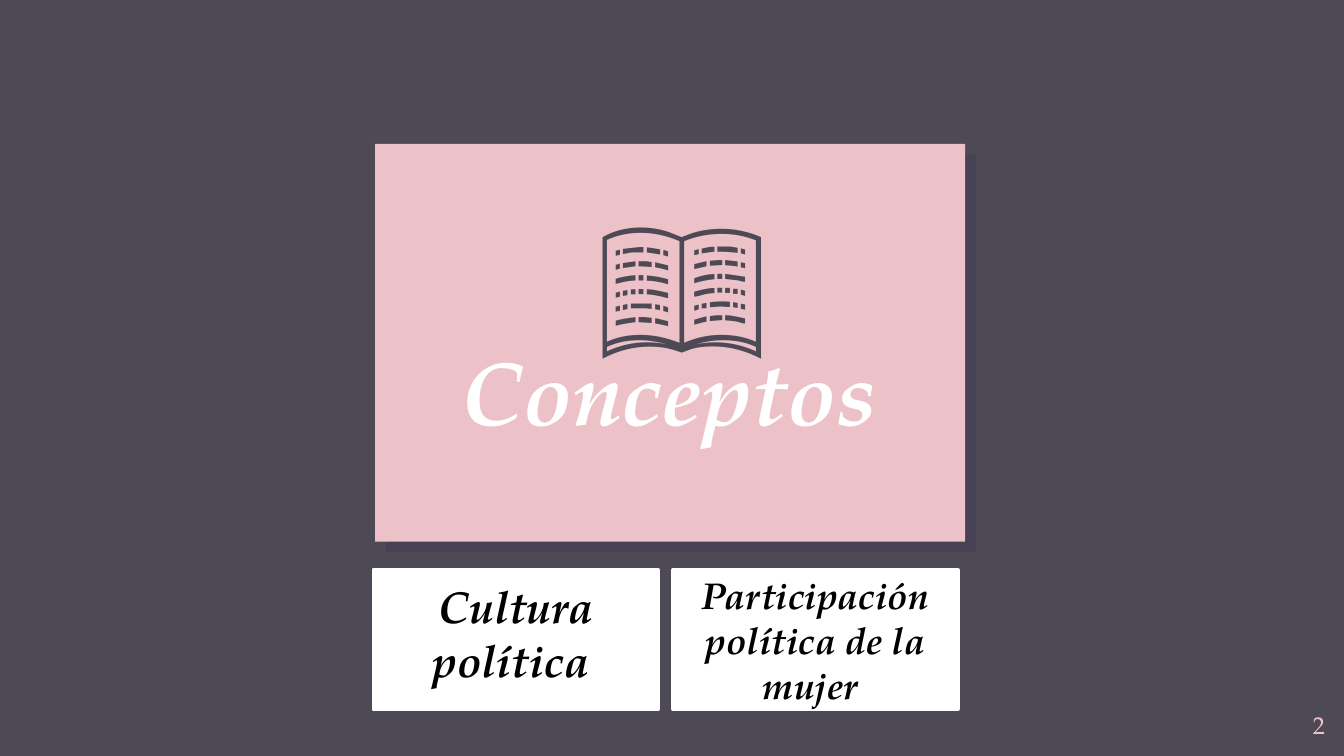
"""Build the section slide on political concepts."""
from typing import NamedTuple

from lxml import etree
from pptx import Presentation
from pptx.dml.color import RGBColor
from pptx.enum.shapes import MSO_SHAPE
from pptx.enum.text import MSO_ANCHOR, MSO_AUTO_SIZE, PP_ALIGN
from pptx.oxml.ns import qn
from pptx.util import Cm, Pt

RECT = MSO_SHAPE.RECTANGLE
TOP, MIDDLE = MSO_ANCHOR.TOP, MSO_ANCHOR.MIDDLE
LEFT, CENTER, RIGHT = PP_ALIGN.LEFT, PP_ALIGN.CENTER, PP_ALIGN.RIGHT
NO_FIT = MSO_AUTO_SIZE.NONE
SERIF, SYMBOL = "TeX Gyre Pagella", "Times New Roman"
GREY, PINK, WHITE, BLACK, NAVY = "4D4A56", "ECC1C8", "FFFFFF", "000000", "20124D"


class Box(NamedTuple):
    left: float
    top: float
    width: float
    height: float


class Style(NamedTuple):
    size: int
    color: str
    align: int = CENTER
    anchor: int = TOP
    bold: bool = True
    face: str = SERIF
    inset: float = 0.25


def paint(target, color: str) -> None:
    """Give a fill or line fill one solid colour."""
    target.solid()
    target.fore_color.rgb = RGBColor.from_string(color)


def lengths(box: Box) -> list:
    """Turn a box into slide lengths."""
    return [Cm(value) for value in box]


def write(shape, text: str, style: Style) -> None:
    """Put styled text into a shape."""
    frame = shape.text_frame
    frame.text = text
    form = {
        "word_wrap": True,
        "auto_size": NO_FIT,
        "vertical_anchor": style.anchor,
        "margin_top": Cm(style.inset),
        "margin_bottom": Cm(style.inset),
    }
    for name, value in form.items():
        setattr(frame, name, value)
    line = frame.paragraphs[0]
    line.alignment = style.align
    font = line.runs[0].font
    form = {
        "name": style.face,
        "size": Pt(style.size),
        "bold": style.bold,
        "italic": style.bold,
    }
    for name, value in form.items():
        setattr(font, name, value)
    paint(font.fill, style.color)


def label(slide, box: Box, text: str, style: Style) -> None:
    """Add a text box."""
    write(slide.shapes.add_textbox(*lengths(box)), text, style)


def panel(slide, box: Box, color: str):
    """Add a plain filled rectangle."""
    shape = slide.shapes.add_shape(RECT, *lengths(box))
    shape.shadow.inherit = False
    paint(shape.fill, color)
    shape.line.fill.background()
    return shape


def shade(shape) -> None:
    """Add a hard, faint shadow to the lower right."""
    effects = shape._element.spPr.find(qn("a:effectLst"))
    shadow = etree.SubElement(
        effects, qn("a:outerShdw"), blurRad="0", dist=str(Pt(8.2)),
        dir="2700000", algn="bl", rotWithShape="0")
    tint = etree.SubElement(shadow, qn("a:srgbClr"), val=NAVY)
    etree.SubElement(tint, qn("a:alpha"), val="15000")


def main() -> None:
    """Draw the slide and save it."""
    deck = Presentation()
    deck.slide_width, deck.slide_height = Cm(25.4), Cm(14.29)
    slide = deck.slides.add_slide(deck.slide_layouts[5])
    paint(slide.background.fill, GREY)

    shade(panel(slide, Box(7.09, 2.72, 11.15, 7.52), PINK))

    title = slide.shapes.title
    title._element.getparent().append(title._element)
    spot = lengths(Box(7.06, 6.1, 11.18, 3.23))
    for name, value in zip(Box._fields, spot):
        setattr(title, name, value)
    write(title, "Conceptos", Style(48, WHITE))

    label(slide, Box(23.77, 13.18, 1.52, 1.09), "2",
          Style(13, PINK, align=RIGHT, bold=False))
    label(slide, Box(11.02, 3.18, 4.09, 4.01), "📖",
          Style(88, GREY, align=LEFT, bold=False, face=SYMBOL, inset=0.13))

    cards = [panel(slide, Box(7.06 + 5.66 * col, 10.77, 5.38, 2.64), WHITE)
             for col in range(2)]
    for card in cards:
        paint(card.line.fill, WHITE)
        card.line.width = Pt(2)
    label(slide, Box(7.57, 10.69, 4.37, 2.03), "Cultura política ",
          Style(24, BLACK))
    write(cards[1], "Participación política de la mujer ",
          Style(20, BLACK, anchor=MIDDLE, inset=0.13))

    deck.save("out.pptx")


if __name__ == "__main__":
    main()
